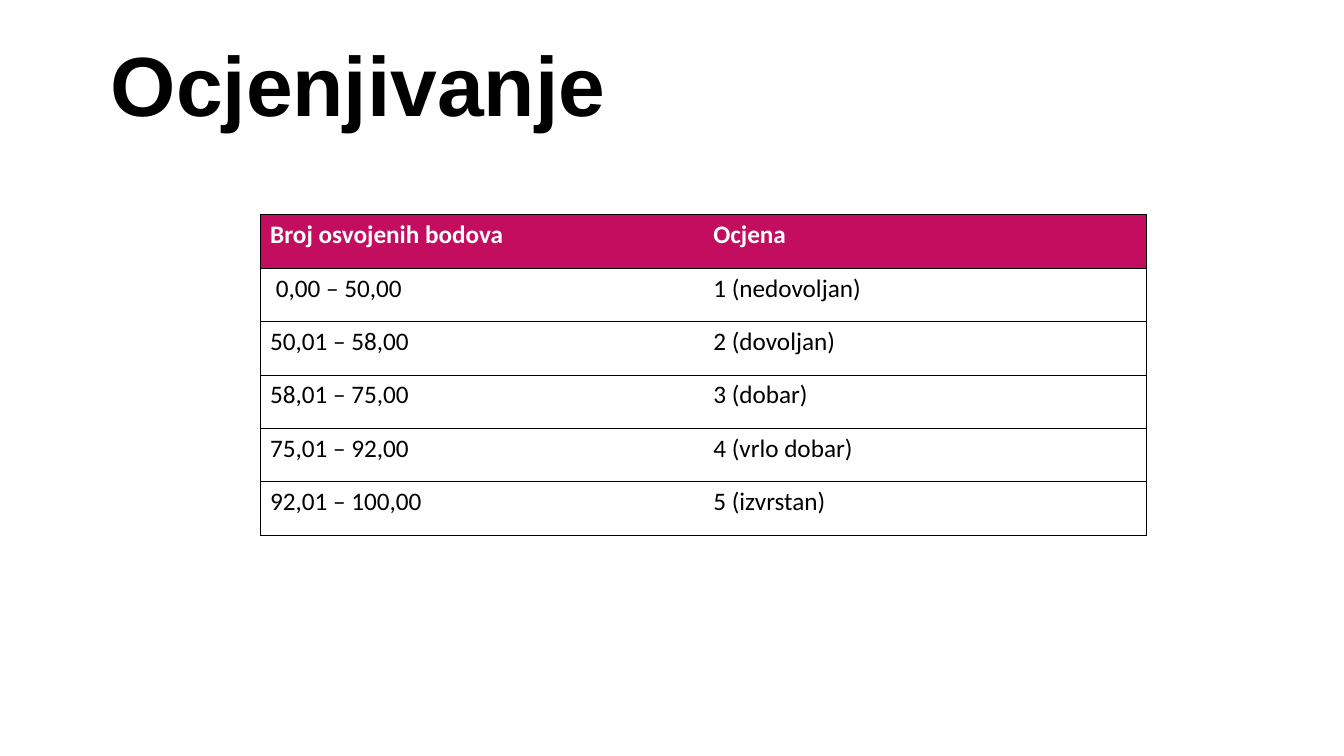
import pptx
import pptx.util
import pptx.dml.color
import pptx.enum.text
import pptx.oxml
import pptx.oxml.ns

Inches = pptx.util.Inches
Pt = pptx.util.Pt
RGBColor = pptx.dml.color.RGBColor

BLACK = RGBColor(0x00, 0x00, 0x00)
WHITE = RGBColor(0xFF, 0xFF, 0xFF)
PINK = RGBColor(0xC3, 0x0E, 0x60)

GRADES = [
    ("Broj osvojenih bodova", "Ocjena"),
    (" 0,00 – 50,00", "1 (nedovoljan)"),
    ("50,01 – 58,00", "2 (dovoljan)"),
    ("58,01 – 75,00", "3 (dobar)"),
    ("75,01 – 92,00", "4 (vrlo dobar)"),
    ("92,01 – 100,00", "5 (izvrstan)"),
]


def add_run(para, text, face, size, color, bold):
    run = para.add_run()
    run.text = text
    run.font.name = face
    run.font.size = Pt(size)
    run.font.color.rgb = color
    run.font.bold = bold


def add_edges(cell, shown):
    # Rule the shown sides and clear the others
    props = cell._tc.get_or_add_tcPr()
    for side in "LRTB":
        if side in shown:
            paint = f'<a:solidFill><a:srgbClr val="{BLACK}"/></a:solidFill>'
        else:
            paint = "<a:noFill/>"
        props.append(pptx.oxml.parse_xml(
            f'<a:ln{side} {pptx.oxml.ns.nsdecls("a")} w="{Pt(0.5)}">'
            f"{paint}</a:ln{side}>"))


def add_title(slide, left, top, width, height):
    box = slide.shapes.add_textbox(
        Inches(left), Inches(top), Inches(width), Inches(height))
    frame = box.text_frame
    frame.word_wrap = True
    frame.vertical_anchor = pptx.enum.text.MSO_ANCHOR.BOTTOM
    para = frame.paragraphs[0]
    para.line_spacing = 0.9
    add_run(para, "Ocjenjivanje", "Arial", 60, BLACK, True)


def add_grades(slide, left, top, width, height):
    table = slide.shapes.add_table(
        len(GRADES), len(GRADES[0]), Inches(left), Inches(top),
        Inches(width), Inches(height)).table
    for i, row in enumerate(GRADES):
        head = i == 0
        for j, text in enumerate(row):
            cell = table.cell(i, j)
            # Outer frame and row rules only
            add_edges(cell, "LTB" if j == 0 else "RTB")
            if head:
                cell.fill.solid()
                cell.fill.fore_color.rgb = PINK
            else:
                cell.fill.background()
            add_run(cell.text_frame.paragraphs[0], text, "Calibri", 18,
                    WHITE if head else BLACK, head)


def main():
    deck = pptx.Presentation()
    deck.slide_width = Inches(13.33)
    deck.slide_height = Inches(7.5)
    slide = deck.slides.add_slide(deck.slide_layouts[6])
    add_title(slide, 1, 0.23, 10, 1.16)
    add_grades(slide, 2.58, 2.13, 8.79, 3.18)
    deck.save("out.pptx")


if __name__ == "__main__":
    main()
